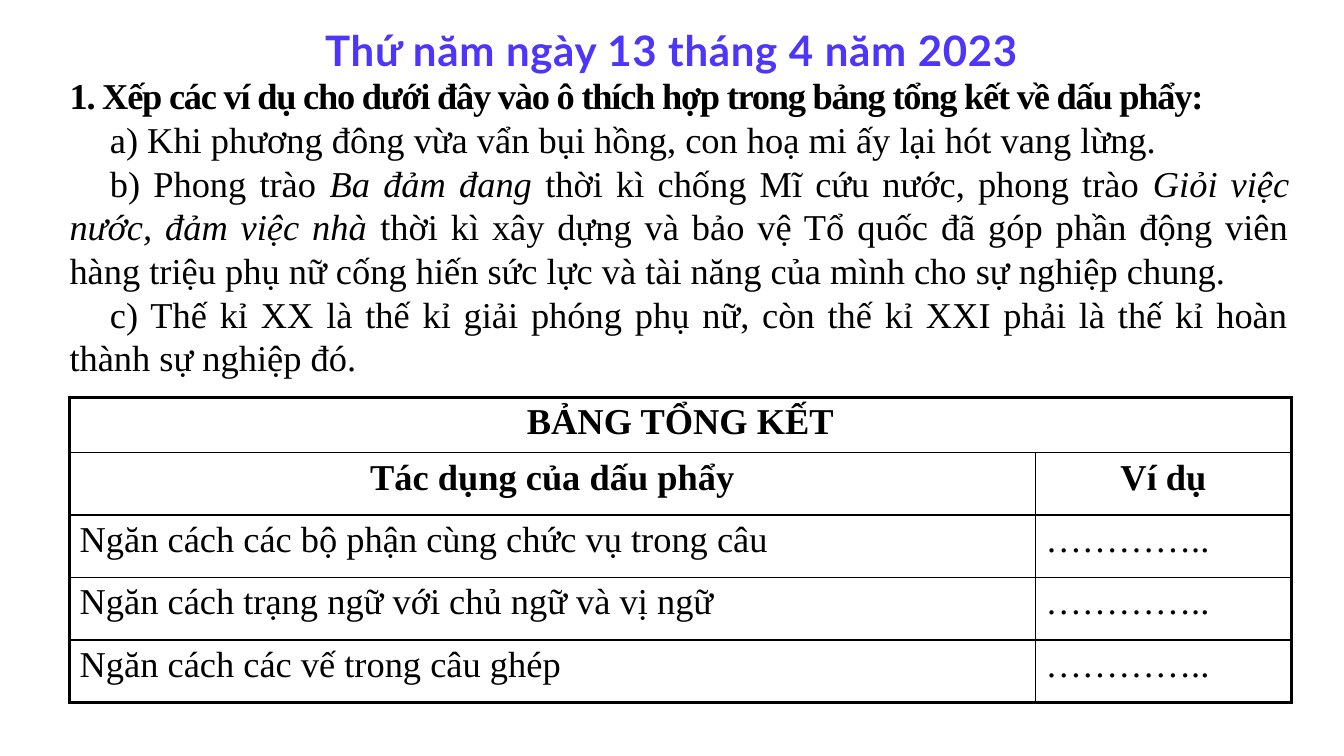
from lxml import etree
from pptx import Presentation
from pptx.dml.color import RGBColor
from pptx.enum.text import MSO_AUTO_SIZE, PP_ALIGN
from pptx.oxml.ns import qn
from pptx.util import Inches, Pt

BLACK = RGBColor(0x00, 0x00, 0x00)
VIOLET = RGBColor(0x4D, 0x35, 0xFB)
WHITE = RGBColor(0xFF, 0xFF, 0xFF)
LEFT, CENTER, JUSTIFY = PP_ALIGN.LEFT, PP_ALIGN.CENTER, PP_ALIGN.JUSTIFY
FIT_SHAPE = MSO_AUTO_SIZE.SHAPE_TO_FIT_TEXT

QUESTION = "1. Xếp các ví dụ cho dưới đây vào ô thích hợp trong bảng tổng kết về dấu phẩy:"
# Each example is a list of pieces; every second piece is italic.
EXAMPLES = [
    ["a) Khi phương đông vừa vẩn bụi hồng, con hoạ mi ấy lại hót vang lừng."],
    ["b) Phong trào ", "Ba đảm đang ", "thời kì chống Mĩ cứu nước, phong trào ",
     "Giỏi việc nước, đảm việc nhà ",
     "thời kì xây dựng và bảo vệ Tổ quốc đã góp phần động viên hàng triệu phụ nữ "
     "cống hiến sức lực và tài năng của mình cho sự nghiệp chung."],
    ["c) Thế kỉ XX là thế kỉ giải phóng phụ nữ, còn thế kỉ XXI phải là thế kỉ "
     "hoàn thành sự nghiệp đó."],
]
BLANK_ANSWER = "………….."
SUMMARY = [
    ("BẢNG TỔNG KẾT", ""),
    ("Tác dụng của dấu phẩy", "Ví dụ"),
    ("Ngăn cách các bộ phận cùng chức vụ trong câu", BLANK_ANSWER),
    ("Ngăn cách trạng ngữ với chủ ngữ và vị ngữ", BLANK_ANSWER),
    ("Ngăn cách các vế trong câu ghép", BLANK_ANSWER),
]
HEADER_ROWS = 2
COLUMN_WIDTHS = [9.58, 2.54]
ROW_HEIGHTS = [0.55] + [0.62] * 4
OUTER_LINE, INNER_LINE = 2.25, 1


def add_run(paragraph, text, size=26, font="Times New Roman", color=BLACK,
            bold=False, italic=False, spacing=0):
    """Append formatted text; spacing is the letter spacing in points."""
    run = paragraph.add_run()
    run.text = text
    run.font.size = Pt(size)
    run.font.name = font
    run.font.color.rgb = color
    run.font.bold = bold
    run.font.italic = italic
    if spacing:
        run.font._element.set("spc", str(round(spacing * 100)))


def add_text_frame(slide, left, top, width, height):
    box = slide.shapes.add_textbox(Inches(left), Inches(top), Inches(width), Inches(height))
    frame = box.text_frame
    frame.word_wrap = True
    frame.auto_size = FIT_SHAPE
    return frame


def add_date(slide):
    date = add_text_frame(slide, 0.97, 0.19, 11.39, 0.61).paragraphs[0]
    date.alignment = CENTER
    add_run(date, "Thứ năm ngày 13 tháng 4 năm 2023", size=30, font="Lato",
            color=VIOLET, bold=True, spacing=0.5)


def add_exercise(slide):
    frame = add_text_frame(slide, 0.57, 0.67, 12.34, 3.18)
    frame.margin_left = frame.margin_right = Inches(0.12)
    frame.margin_top = frame.margin_bottom = Inches(0.06)
    question = frame.paragraphs[0]
    question.alignment = JUSTIFY
    add_run(question, QUESTION, bold=True, spacing=-0.9)
    for pieces in EXAMPLES:
        example = frame.add_paragraph()
        example.alignment = JUSTIFY
        properties = example._p.get_or_add_pPr()
        properties.set("marL", "0")
        properties.set("indent", str(Inches(0.4)))
        for index, piece in enumerate(pieces):
            add_run(example, piece, italic=index % 2 == 1)


def set_percent_space_before(paragraph, percent):
    space = etree.SubElement(paragraph._p.get_or_add_pPr(), qn("a:spcBef"))
    etree.SubElement(space, qn("a:spcPct")).set("val", str(percent * 1000))


def set_borders(cell, widths):
    """Draw black borders; widths maps L, R, T and B, in that order, to points."""
    properties = cell._tc.get_or_add_tcPr()
    for position, (side, width) in enumerate(widths.items()):
        line = etree.Element(qn(f"a:ln{side}"), w=str(Pt(width)))
        fill = etree.SubElement(line, qn("a:solidFill"))
        etree.SubElement(fill, qn("a:srgbClr")).set("val", str(BLACK))
        properties.insert(position, line)


def add_summary_table(slide):
    row_count, column_count = len(SUMMARY), len(COLUMN_WIDTHS)
    table = slide.shapes.add_table(
        row_count, column_count, Inches(0.69), Inches(3.94),
        Inches(sum(COLUMN_WIDTHS)), Inches(sum(ROW_HEIGHTS))).table
    table.first_row = table.horz_banding = False
    for column, width in zip(table.columns, COLUMN_WIDTHS):
        column.width = Inches(width)
    for row, height in zip(table.rows, ROW_HEIGHTS):
        row.height = Inches(height)
    table.cell(0, 0).merge(table.cell(0, column_count - 1))

    for r, texts in enumerate(SUMMARY):
        for c, text in enumerate(texts):
            cell = table.cell(r, c)
            cell.fill.background()
            on_edge = {
                "L": c == 0,
                "R": c == column_count - 1 or cell.is_merge_origin,
                "T": r == 0,
                "B": r == row_count - 1,
            }
            set_borders(cell, {side: OUTER_LINE if outer else INNER_LINE
                               for side, outer in on_edge.items()})
            if cell.is_spanned:
                continue
            is_header = r < HEADER_ROWS
            paragraph = cell.text_frame.paragraphs[0]
            paragraph.alignment = CENTER if is_header else LEFT
            set_percent_space_before(paragraph, 20)
            add_run(paragraph, text, bold=is_header)


def main():
    presentation = Presentation()
    presentation.slide_width = Inches(13.33)
    presentation.slide_height = Inches(7.5)
    slide = presentation.slides.add_slide(presentation.slide_layouts[6])
    slide.background.fill.solid()
    slide.background.fill.fore_color.rgb = WHITE
    add_exercise(slide)
    add_summary_table(slide)
    add_date(slide)
    presentation.save("out.pptx")


if __name__ == "__main__":
    main()
